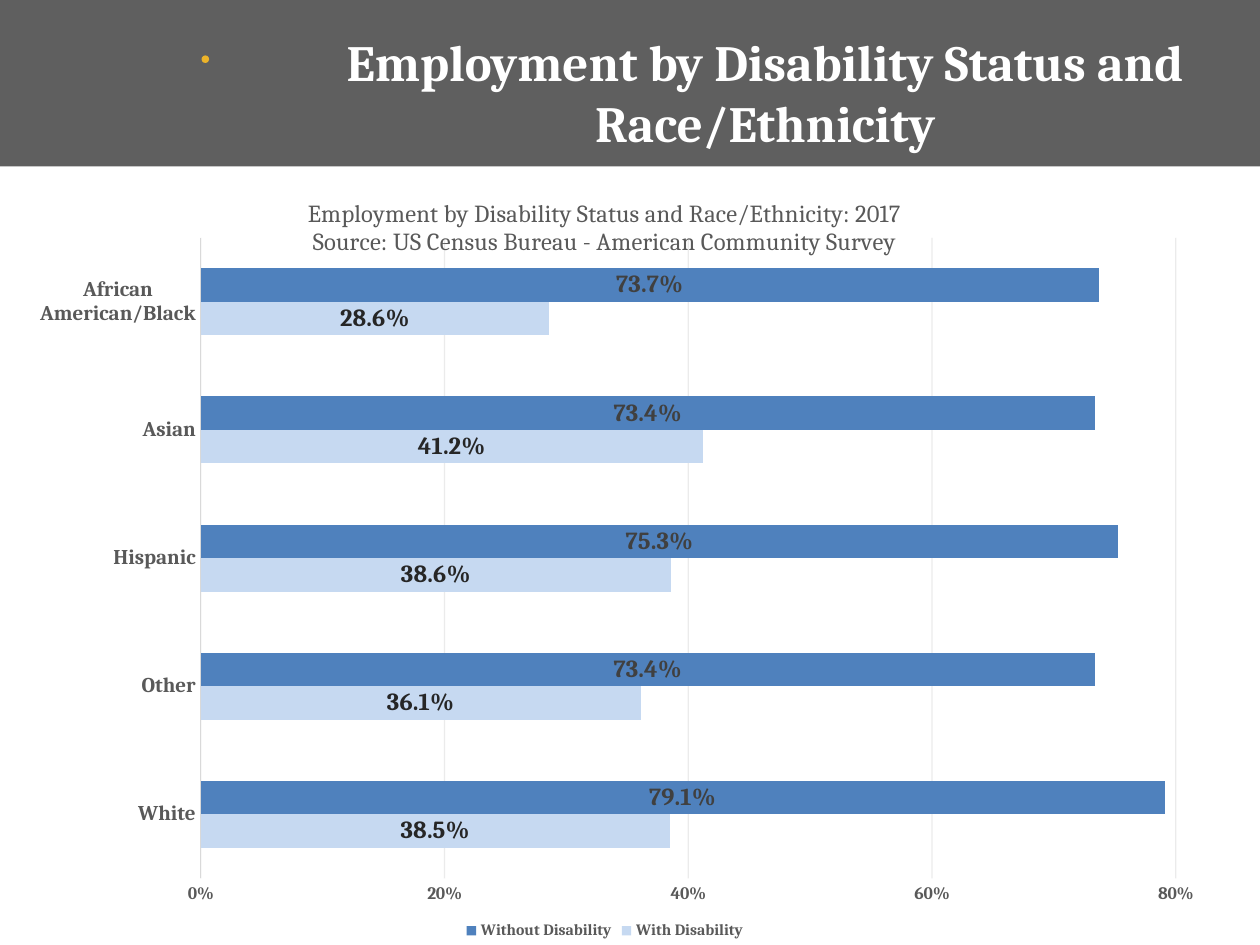
from lxml import etree
from pptx import Presentation
from pptx.chart.data import CategoryChartData
from pptx.dml.color import RGBColor
from pptx.enum.chart import (XL_CHART_TYPE, XL_LABEL_POSITION as LabelPos,
                             XL_LEGEND_POSITION as LegendPos, XL_TICK_MARK as Tick)
from pptx.enum.shapes import MSO_SHAPE as Shape
from pptx.enum.text import MSO_ANCHOR as Anchor, PP_ALIGN as Align
from pptx.oxml import parse_xml
from pptx.oxml.ns import nsdecls, qn
from pptx.util import Inches, Pt

COLORS = {"band": "5F5F5F", "dot": "ECB329", "white": "FFFFFF", "black": "000000",
          "text": "595959", "grid": "D9D9D9", "with": "C6D9F1", "without": "4F81BD",
          "with_label": "262626", "without_label": "404040"}
CATEGORIES = ["White", "Other", "Hispanic", "Asian", "African American/Black"]
SERIES = [("With Disability", [0.385, 0.361, 0.386, 0.412, 0.286], "with"),
          ("Without Disability", [0.791, 0.734, 0.753, 0.734, 0.737], "without")]
CHART_TITLE = ["Employment by Disability Status and Race/Ethnicity: 2017",
               "Source: US Census Bureau - American Community Survey"]


def rgb(name):
    return RGBColor.from_string(COLORS[name])


def style_font(font, size, color, bold=True, name="Cambria"):
    font.name, font.size, font.bold = name, Pt(size), bold
    font.color.rgb = rgb(color)


def write(tf, lines, align=Align.CENTER, **fmt):
    """Put each line in its own formatted paragraph."""
    for i, line in enumerate(lines):
        p = tf.add_paragraph() if i else tf.paragraphs[0]
        p.alignment = align
        r = p.add_run()
        r.text = line
        style_font(r.font, **fmt)


class SlideBuilder:
    def __init__(self, slide):
        self.slide = slide

    def shape(self, kind, x, y, w, h, fill):
        sp = self.slide.shapes.add_shape(kind, *map(Inches, (x, y, w, h)))
        sp.shadow.inherit = False
        sp.fill.solid()
        sp.fill.fore_color.rgb = rgb(fill)
        sp.line.fill.background()

    def text(self, x, y, w, h, lines, **fmt):
        tf = self.slide.shapes.add_textbox(*map(Inches, (x, y, w, h))).text_frame
        tf.word_wrap = True
        tf.vertical_anchor = Anchor.MIDDLE
        tf.margin_left = tf.margin_right = tf.margin_top = tf.margin_bottom = 0
        write(tf, lines, **fmt)

    def bar_chart(self, x, y, w, h, title, categories, series, plot_area):
        data = CategoryChartData(number_format="0.0%")
        data.categories = categories
        for name, values, _ in series:
            data.add_series(name, values)
        frame = self.slide.shapes.add_chart(
            XL_CHART_TYPE.BAR_CLUSTERED, *map(Inches, (x, y, w, h)), data)
        chart = frame.chart
        style_font(chart.font, 10, "black", bold=False)
        chart.has_title = True
        write(chart.chart_title.text_frame, title, size=14, color="text", bold=False)

        # Bars and value labels
        plot = chart.plots[0]
        plot.gap_width, plot.overlap, plot.vary_by_categories = 182, 0, False
        for ser, (_, _, color) in zip(plot.series, series):
            ser.format.fill.solid()
            ser.format.fill.fore_color.rgb = rgb(color)
            labels = ser.data_labels
            labels.show_value = True
            labels.position = LabelPos.CENTER
            labels.number_format, labels.number_format_is_linked = "0.0%", False
            style_font(labels.font, 14, color + "_label")

        # Axes
        cat, val = chart.category_axis, chart.value_axis
        for axis, size in ((cat, 12), (val, 10)):
            axis.major_tick_mark = axis.minor_tick_mark = Tick.NONE
            style_font(axis.tick_labels.font, size, "text")
        val.minimum_scale, val.maximum_scale, val.major_unit = 0, 0.8, 0.2
        val.tick_labels.number_format = "0%"
        val.tick_labels.number_format_is_linked = False
        val.format.line.fill.background()
        val.has_major_gridlines = True
        for line in (cat.format.line, val.major_gridlines.format.line):
            line.width = Pt(0.75)
            line.color.rgb = rgb("grid")
        grid_color = next(val.major_gridlines.format.line.fill._xPr.iter(qn("a:srgbClr")))
        etree.SubElement(grid_color, qn("a:alpha")).set("val", "50000")

        # Legend
        chart.has_legend = True
        chart.legend.position = LegendPos.BOTTOM
        chart.legend.include_in_layout = False
        style_font(chart.legend.font, 9, "text")
        self.place_plot(chart, plot_area)

    def place_plot(self, chart, plot_area):
        """Fix the inner plot area, given as fractions of the chart."""
        area = next(chart.element.iter(qn("c:plotArea")))
        for old in area.findall(qn("c:layout")):
            area.remove(old)
        sizes = "".join(f'<c:{k} val="{v}"/>' for k, v in zip("xywh", plot_area))
        area.insert(0, parse_xml(
            f'<c:layout {nsdecls("c")}><c:manualLayout><c:layoutTarget val="inner"/>'
            f'<c:xMode val="edge"/><c:yMode val="edge"/>{sizes}'
            '</c:manualLayout></c:layout>'))


def main():
    prs = Presentation()
    prs.slide_width, prs.slide_height = Inches(10), Inches(7.5)
    s = SlideBuilder(prs.slides.add_slide(prs.slide_layouts[6]))

    # Header band with its dot
    s.shape(Shape.RECTANGLE, 0, 0, 10, 1.32, "band")
    s.shape(Shape.OVAL, 1.6, 0.44, 0.06, 0.06, "dot")

    # Employment chart
    s.bar_chart(0, 1.36, 9.6, 6.14, CHART_TITLE, CATEGORIES, SERIES,
                plot_area=(0.166, 0.086, 0.806, 0.828))

    # Slide title
    s.text(2.3, 0.22, 7.55, 1.01, ["Employment by Disability Status and Race/Ethnicity"],
           size=29, color="white")
    prs.save("out.pptx")


if __name__ == "__main__":
    main()
